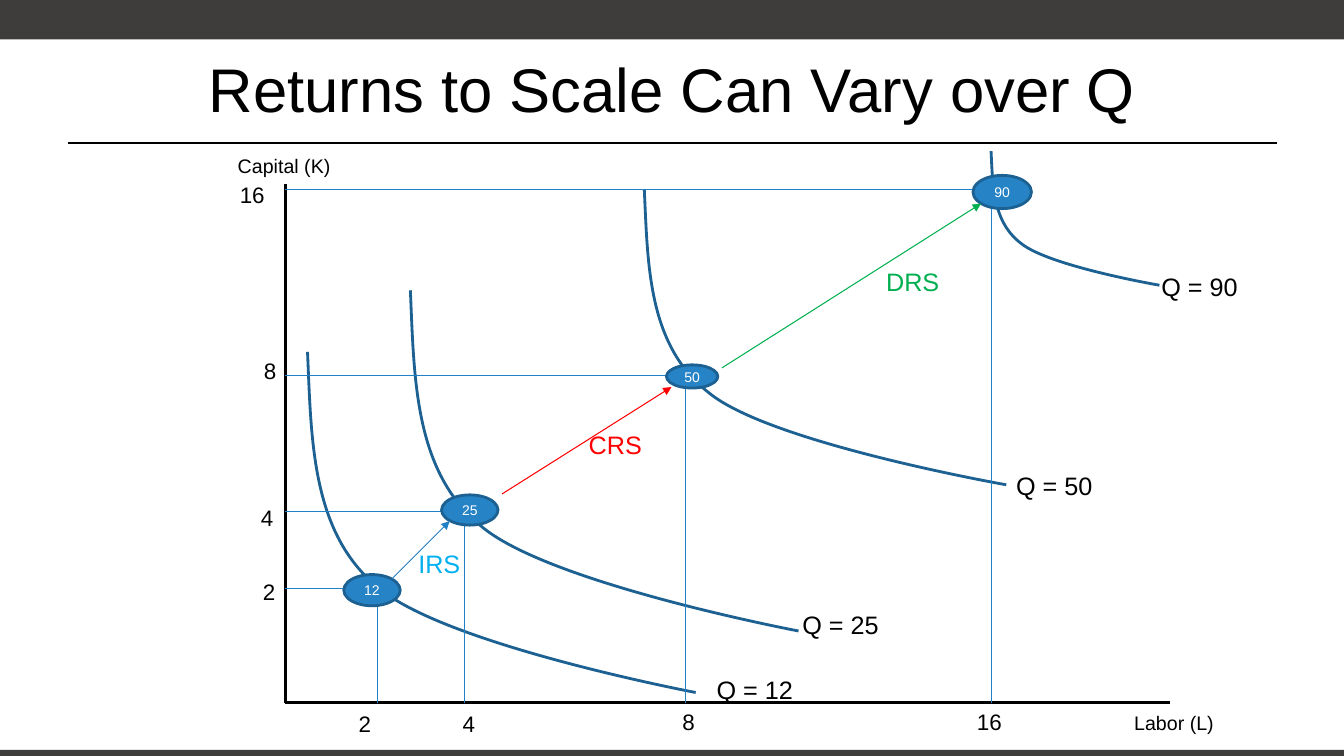
"""Builds the slide on returns to scale."""
import pptx
import pptx.util
import pptx.dml.color
import pptx.enum.shapes
import pptx.enum.text
import pptx.oxml.ns
import lxml.etree

Inches = pptx.util.Inches
Pt = pptx.util.Pt
qn = pptx.oxml.ns.qn
SHAPE = pptx.enum.shapes.MSO_SHAPE
ALIGN = pptx.enum.text.PP_ALIGN
MIDDLE = pptx.enum.text.MSO_ANCHOR.MIDDLE
BLACK, BAR, WHITE = "000000", "3E3D3C", "FFFFFF"
CURVE, GUIDE, MARKER = "1C6192", "2181C6", "2683C6"

ISOQUANT = [(0, 0), (0.01, 0.26), (0.01, 0.53), (0.18, 0.69),
            (0.35, 0.86), (1, 1), (1, 1)]
# Offsets are right of and up from the origin of the axes.
LEVELS = [
    dict(q=12, units=2, point=(0.91, 1.13), curve=(0.22, 3.48, 3.85, 3.38),
         marker=(0.58, 1.27, 0.56, 0.31), name=(4.18, 0.33),
         k_tick=(-0.32, 1.28), l_tick=(0.63, -0.03)),
    dict(q=25, units=4, point=(1.78, 1.9), curve=(1.24, 4.09, 3.85, 3.38),
         marker=(1.55, 2.06, 0.56, 0.3), name=(5.03, 0.97),
         k_tick=(-0.34, 2.02), l_tick=(1.66, -0.03)),
    dict(q=50, units=8, point=(3.97, 3.24), curve=(3.56, 5.09, 3.59, 2.93),
         marker=(3.78, 3.35, 0.51, 0.23), name=(7.15, 2.35),
         k_tick=(-0.31, 3.48), l_tick=(3.84, -0.01)),
    dict(q=90, units=16, point=(7, 5.09), curve=(7, 5.47, 1.67, 1.33),
         marker=(6.82, 5.23, 0.58, 0.33), name=(8.59, 4.33),
         k_tick=(-0.55, 5.22), l_tick=(6.76, -0.01)),
]
STEPS = [
    ("IRS", (1.06, 1.23), (1.63, 1.8), GUIDE, (1.22, 1.58), "00B0F0"),
    ("CRS", (2.15, 2.07), (3.83, 3.13), "FF0000", (2.91, 2.76), "FF0000"),
    ("DRS", (4.33, 3.32), (6.9, 4.95), "00B050", (5.86, 4.38), "00B050"),
]


def rgb(value):
    """Return the colour for a hex string."""
    return pptx.dml.color.RGBColor.from_string(value)


def write(tf, text, size=18, color=BLACK, align=ALIGN.LEFT, anchor=None):
    """Write one formatted line of text."""
    if anchor is not None:
        tf.vertical_anchor = anchor
    p = tf.paragraphs[0]
    p.alignment = align
    r = p.add_run()
    r.text = text
    r.font.name = "Arial"
    r.font.size = Pt(size)
    r.font.color.rgb = rgb(color)


def add_label(s, text, left, top, width, height, **style):
    """Add an unwrapped text box."""
    sp = s.shapes.add_textbox(*map(Inches, (left, top, width, height)))
    sp.text_frame.word_wrap = False
    write(sp.text_frame, text, **style)


def add_block(s, shape, box, fill, line=None):
    """Add a filled preset shape."""
    sp = s.shapes.add_shape(shape, *map(Inches, box))
    sp.shadow.inherit = False
    sp.fill.solid()
    sp.fill.fore_color.rgb = rgb(fill)
    if line:
        sp.line.color.rgb = rgb(line)
        sp.line.width = Pt(2)
    else:
        sp.line.fill.background()
    return sp


def add_line(s, start, end, color=BLACK, width=0.75, arrow=False):
    """Add a straight line with an optional arrowhead at its end."""
    sp = s.shapes.add_connector(pptx.enum.shapes.MSO_CONNECTOR.STRAIGHT,
                                *map(Inches, (*start, *end)))
    sp.line.color.rgb = rgb(color)
    sp.line.width = Pt(width)
    if arrow:
        ln = sp.line._get_or_add_ln()
        lxml.etree.SubElement(ln, qn("a:tailEnd"), type="triangle")
    lxml.etree.SubElement(sp._element.spPr, qn("a:effectLst"))


def add_isoquant(s, left, top, width, height):
    """Draw the isoquant as two Bezier curves stretched to a box."""
    points = [(Inches(left + x * width), Inches(top + y * height))
              for x, y in ISOQUANT]
    builder = s.shapes.build_freeform(*points[0])
    builder.add_line_segments(points[1:], close=False)
    sp = builder.convert_to_shape()
    segments = list(sp._element.iter(qn("a:lnTo")))
    outline = segments[0].getparent()
    for i in range(0, len(segments), 3):
        bezier = lxml.etree.SubElement(outline, qn("a:cubicBezTo"))
        for segment in segments[i:i + 3]:
            bezier.append(segment[0])
            outline.remove(segment)
    sp.shadow.inherit = False
    sp.fill.background()
    sp.line.color.rgb = rgb(CURVE)
    sp.line.width = Pt(2)


def add_frame(s, left, top, width, height):
    """Add the bars at the top and bottom of the slide."""
    for y, bar in ((top, 0.39), (top + height - 0.06, 0.06)):
        add_block(s, SHAPE.RECTANGLE, (left, y, width, bar), BAR)


def add_title(s, left, top, width, height):
    """Fill the title and rule it off."""
    sp = s.shapes.title
    sp.left, sp.top, sp.width, sp.height = map(
        Inches, (left, top, width, height))
    write(sp.text_frame, "Returns to Scale Can Vary over Q", size=44,
          align=ALIGN.CENTER, anchor=MIDDLE)
    rule = top + height - 0.08
    add_line(s, (left, rule), (left + width, rule), width=1.25)


def add_diagram(s, left, top, width, height):
    """Draw axes, isoquants, guides, markers and scale arrows."""
    def at(right, up):
        """Convert offsets from the origin to slide positions."""
        return left + right, top + height - up

    for end in (at(0, height), at(width, 0)):
        add_line(s, at(0, 0), end, width=2)
    add_label(s, "Capital (K)", left - 0.57, top - 0.35, 1.13, 0.32, size=14)
    add_label(s, "Labor (L)", left + width - 0.45, top + height + 0.03,
              0.99, 0.34, size=14)
    for level in LEVELS:
        x, y = level["point"]
        curve, marker = level["curve"], level["marker"]
        add_isoquant(s, *at(*curve[:2]), *curve[2:])
        add_line(s, at(0, y), at(x, y), GUIDE)
        add_line(s, at(x, 0), at(x, y), GUIDE)
        units = str(level["units"])
        for tick in ("k_tick", "l_tick"):
            add_label(s, units, *at(*level[tick]), 0.21 + 0.12 * len(units),
                      0.37, size=16)
        add_label(s, f"Q = {level['q']}", *at(*level["name"]), 0.97, 0.4)
        sp = add_block(s, SHAPE.OVAL, (*at(*marker[:2]), *marker[2:]),
                       MARKER, CURVE)
        sp.text_frame.word_wrap = False
        write(sp.text_frame, str(level["q"]), size=10, color=WHITE,
              align=ALIGN.CENTER, anchor=MIDDLE)
    for text, start, end, color, label, ink in STEPS:
        add_line(s, at(*start), at(*end), color, arrow=True)
        add_label(s, text, *at(*label), 0.62 if text == "IRS" else 0.73, 0.4,
                  color=ink)


def main():
    """Build and save the presentation."""
    prs = pptx.Presentation()
    prs.slide_width, prs.slide_height = Inches(13.33), Inches(7.5)
    s = prs.slides.add_slide(prs.slide_layouts[5])
    add_frame(s, 0, 0, 13.33, 7.5)
    add_title(s, 0.67, 0.25, 12, 1.25)
    add_diagram(s, 2.83, 1.83, 8.77, 5.14)
    prs.save("out.pptx")


if __name__ == "__main__":
    main()
